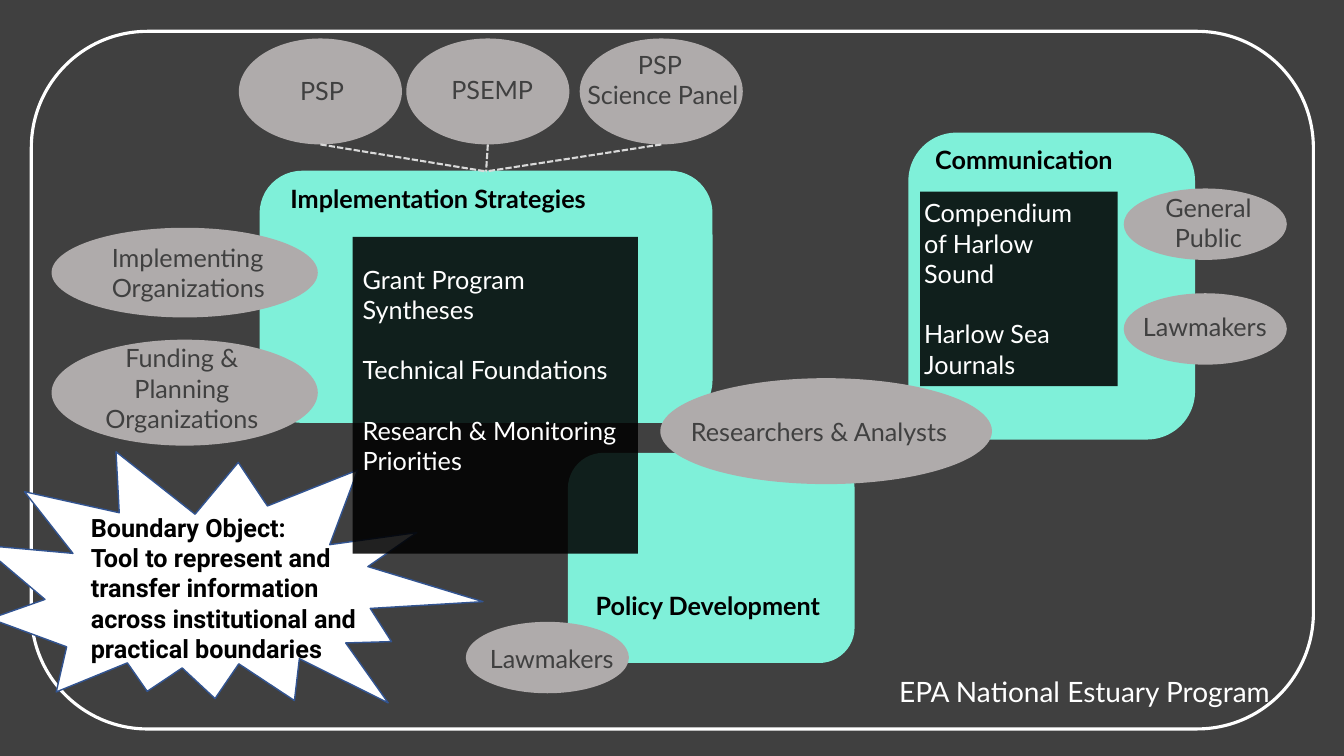
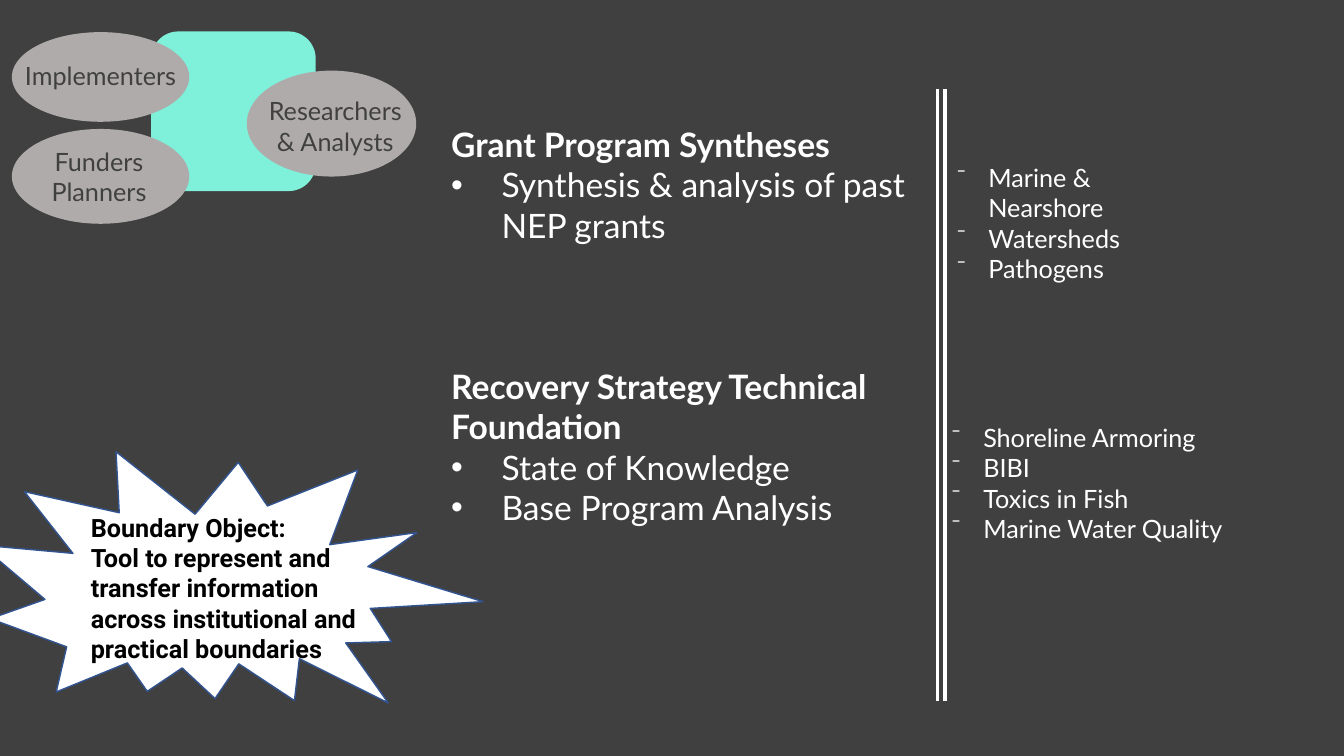
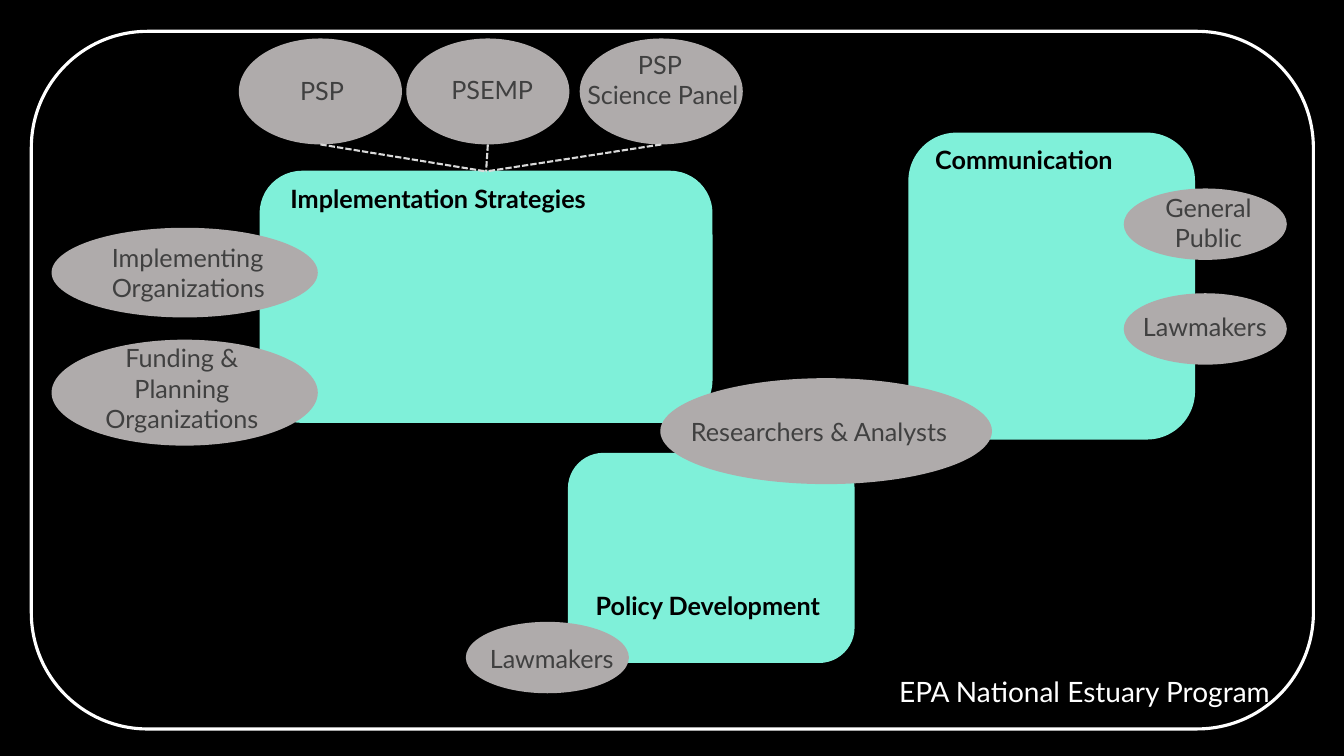
from typing import NamedTuple

from lxml.etree import SubElement
from pptx import Presentation
from pptx.dml.color import RGBColor
from pptx.enum.dml import MSO_LINE
from pptx.enum.shapes import MSO_CONNECTOR, MSO_SHAPE
from pptx.enum.text import PP_ALIGN
from pptx.oxml.ns import qn
from pptx.util import Cm, Pt

COLORS = {
    "slate": "404040",
    "black": "000000",
    "white": "FFFFFF",
    "teal": "7FF0D9",
    "actor": "AFABAB",
    "dash": "D9D9D9",
    "burst": "325491",
}
LEFT, CENTER = PP_ALIGN.LEFT, PP_ALIGN.CENTER
ROUNDED, RECTANGLE = MSO_SHAPE.ROUNDED_RECTANGLE, MSO_SHAPE.RECTANGLE
OVAL, BURST = MSO_SHAPE.OVAL, MSO_SHAPE.EXPLOSION2
STRAIGHT, DASHED = MSO_CONNECTOR.STRAIGHT, MSO_LINE.SQUARE_DOT
BODY_FONT, BURST_FONT = "Lato", "Roboto"
BLANK_LAYOUT = 6
LINE_PITCH = 1.2


class Box(NamedTuple):
    x: float
    y: float
    w: float
    h: float

    def within(self, x, y, w, h):
        return Box(self.x + x, self.y + y, w, h)

    def lengths(self):
        return [Cm(length) for length in self]

    def top_center(self):
        return self.x + self.w / 2, self.y

    def bottom_center(self):
        return self.x + self.w / 2, self.y + self.h


MAP_BOX = Box(0.79, 0.79, 32.31, 17.58)
BURST_BOX = Box(-0.53, 11.05, 12.55, 7.49)
STRATEGY_TOOLS_BOX = Box(8.89, 5.97, 7.19, 7.98)
MEDIA_TOOLS_BOX = Box(23.19, 4.83, 4.98, 4.9)
CLUSTER_BOX = Box(0.3, 0.81, 10.26, 4.83)
DETAIL_BOX = Box(11.07, 2.24, 20.27, 15.42)

STRATEGIES_PLACE = (5.77, 3.53, 11.38, 6.32)
PANELS = [
    ("Implementation Strategies", STRATEGIES_PLACE, (0.51, 0.18, 8.13, 1.03)),
    ("Communication", (22.12, 2.57, 7.19, 7.7), (0.41, 0.15, 6.3, 1.03)),
    ("Policy Development", (13.54, 10.64, 7.19, 5.26), (0.43, 3.33, 6.3, 1.03)),
]
MAP_ACTORS = [
    ("Implementing Organizations", (0.51, 4.95, 6.71, 2.26), (1.27, 0.23, 4.39, 1.8), LEFT),
    ("Funding & Planning Organizations", (0.51, 7.77, 6.71, 2.67), (1.09, -0.05, 4.39, 2.57), CENTER),
    ("Researchers & Analysts", (15.85, 8.74, 8.36, 2.67), (0.43, 0.84, 7.14, 1.03), CENTER),
    ("Lawmakers", (10.95, 14.88, 4.11, 1.8), (-0.03, 0.41, 4.39, 1.03), CENTER),
    ("Lawmakers", (27.53, 6.6, 4.11, 1.8), (-0.15, 0.33, 4.39, 1.03), CENTER),
    ("General Public", (27.53, 3.96, 4.11, 1.8), (0.08, -0.03, 4.11, 1.8), CENTER),
]
ADVISORS = [
    ("PSP", (5.23, 0.18, 4.11, 2.67), (-0.1, 0.81, 4.39, 1.03), CENTER),
    ("PSEMP", (9.45, 0.18, 4.11, 2.67), (-0.03, 0.79, 4.39, 1.03), CENTER),
    ("PSP \nScience Panel", (13.82, 0.18, 4.11, 2.67), (-0.1, 0.15, 4.39, 1.8), CENTER),
]
CLUSTER_ACTORS = [
    ("Implementers", (0, 0, 4.47, 2.26), (0.08, 0.58, 4.39, 1.03), LEFT),
    ("Funders\nPlanners", (0, 2.44, 4.47, 2.39), (0, 0.3, 4.39, 1.8), CENTER),
    ("Researchers & Analysts", (5.92, 0.97, 4.27, 2.67), (0.25, 0.51, 3.96, 1.8), CENTER),
]
TOPICS = [
    ("Grant Program Syntheses", ["Synthesis & analysis of past NEP grants"]),
    ("Recovery Strategy Technical Foundation", ["State of Knowledge", "Base Program Analysis"]),
]
EXAMPLES = [
    ((12.8, 1.73, 6.83, 2.57), ["Marine & Nearshore", "Watersheds", "Pathogens"]),
    ((12.67, 8.28, 7.52, 3.33), ["Shoreline Armoring", "BIBI", "Toxics in Fish", "Marine Water Quality"]),
]


def color(name):
    return RGBColor.from_string(COLORS[name])


def add_slide(deck, background):
    slide = deck.slides.add_slide(deck.slide_layouts[BLANK_LAYOUT])
    slide.background.fill.solid()
    slide.background.fill.fore_color.rgb = color(background)
    return slide


def add_figure(slide, preset, box, fill=None, line=None, width=1):
    figure = slide.shapes.add_shape(preset, *box.lengths())
    figure.shadow.inherit = False
    if fill:
        figure.fill.solid()
        figure.fill.fore_color.rgb = color(fill)
    else:
        figure.fill.background()
    if line:
        figure.line.color.rgb = color(line)
        figure.line.width = Pt(width)
    else:
        figure.line.fill.background()
    return figure


def add_rule(slide, start, end, stroke, width, dash=None):
    rule = slide.shapes.add_connector(STRAIGHT, *[Cm(length) for length in (*start, *end)])
    rule.line.color.rgb = color(stroke)
    rule.line.width = Pt(width)
    if dash:
        rule.line.dash_style = dash
    SubElement(rule.element.spPr, qn("a:effectLst"))


def add_frame(slide, box):
    frame = slide.shapes.add_textbox(*box.lengths()).text_frame
    frame.word_wrap = True
    return frame


def write(frame, text, ink, size=18, bold=False, align=LEFT, font=BODY_FONT,
          skipped_lines=0, bullet=None, indent=0):
    paragraph = frame.add_paragraph() if frame.text else frame.paragraphs[0]
    paragraph.text = text
    paragraph.alignment = align
    if skipped_lines:
        paragraph.space_before = Pt(skipped_lines * size * LINE_PITCH)
    if bullet:
        properties = paragraph._p.get_or_add_pPr()
        properties.set("marL", str(Cm(indent)))
        properties.set("indent", str(-Cm(indent)))
        SubElement(properties, qn("a:buFont"), typeface="Arial")
        SubElement(properties, qn("a:buChar"), char=bullet)
    paragraph.font.name = font
    paragraph.font.size = Pt(size)
    paragraph.font.bold = bold
    paragraph.font.color.rgb = color(ink)


def add_panel(slide, box):
    add_figure(slide, ROUNDED, box, "teal", "teal")


def add_actor(slide, region, name, place, label_place, align):
    ellipse = region.within(*place)
    add_figure(slide, OVAL, ellipse, "actor")
    write(add_frame(slide, ellipse.within(*label_place)), name, "slate", align=align)
    return ellipse


def add_program_map(slide, box):
    add_figure(slide, ROUNDED, box, line="white", width=2.25)
    for title, place, label_place in PANELS:
        panel = box.within(*place)
        add_panel(slide, panel)
        write(add_frame(slide, panel.within(*label_place)), title, "black", bold=True)
    program = add_frame(slide, box.within(21.62, 16.08, 10.03, 1.12))
    write(program, "EPA National Estuary Program", "white", size=20)
    for actor in MAP_ACTORS:
        add_actor(slide, box, *actor)
    junction = box.within(*STRATEGIES_PLACE).top_center()
    for advisor in ADVISORS:
        ellipse = add_actor(slide, box, *advisor)
        add_rule(slide, ellipse.bottom_center(), junction, "dash", 1.5, DASHED)


def add_boundary_burst(slide, box):
    burst = add_figure(slide, BURST, box, "white", "burst")
    burst.rotation = 16.2
    definition = add_frame(slide, box.within(2.57, 1.73, 7.98, 4.11))
    for text in (
        "Boundary Object:",
        "Tool to represent and transfer information across institutional and practical boundaries",
    ):
        write(definition, text, "black", bold=True, font=BURST_FONT)


def add_tools(slide, box, list_place, tools):
    backdrop = add_figure(slide, RECTANGLE, box, "black")
    shade = backdrop.element.spPr.find(".//" + qn("a:srgbClr"))
    SubElement(shade, qn("a:alpha"), val="87000")
    frame = add_frame(slide, box.within(*list_place))
    for index, tool in enumerate(tools):
        write(frame, tool, "white", skipped_lines=min(index, 1))


def add_cluster(slide, box):
    add_panel(slide, box.within(3.53, 0, 4.11, 3.99))
    for actor in CLUSTER_ACTORS:
        add_actor(slide, box, *actor)


def add_details(slide, box):
    add_figure(slide, RECTANGLE, box, "slate")
    topics = add_frame(slide, box.within(0.05, 0.76, 12.14, 12.57))
    for index, (heading, points) in enumerate(TOPICS):
        write(topics, heading, "white", size=24, bold=True, skipped_lines=3 * index)
        for point in points:
            write(topics, point, "white", size=24, bullet="•", indent=1.27)
    for offset in (12.55, 12.75):
        x = box.x + offset
        add_rule(slide, (x, box.y), (x, box.y + box.h), "white", 2.5)
    for place, names in EXAMPLES:
        examples = add_frame(slide, box.within(*place))
        for name in names:
            write(examples, name, "white", bullet="⁻", indent=0.79)


def main():
    deck = Presentation()
    deck.slide_width, deck.slide_height = Cm(33.87), Cm(19.05)

    tools_slide = add_slide(deck, "slate")
    add_program_map(tools_slide, MAP_BOX)
    add_boundary_burst(tools_slide, BURST_BOX)
    add_tools(tools_slide, STRATEGY_TOOLS_BOX, (0, 0.56, 6.96, 6.4), [
        "Grant Program Syntheses", "Technical Foundations", "Research & Monitoring Priorities"])
    add_tools(tools_slide, MEDIA_TOOLS_BOX, (-0.15, 0.03, 4.55, 5.64), [
        "Compendium of Harlow Sound", "Harlow Sea Journals"])

    detail_slide = add_slide(deck, "slate")
    add_cluster(detail_slide, CLUSTER_BOX)
    add_details(detail_slide, DETAIL_BOX)
    add_boundary_burst(detail_slide, BURST_BOX)

    add_program_map(add_slide(deck, "black"), MAP_BOX)
    deck.save("out.pptx")


if __name__ == "__main__":
    main()
